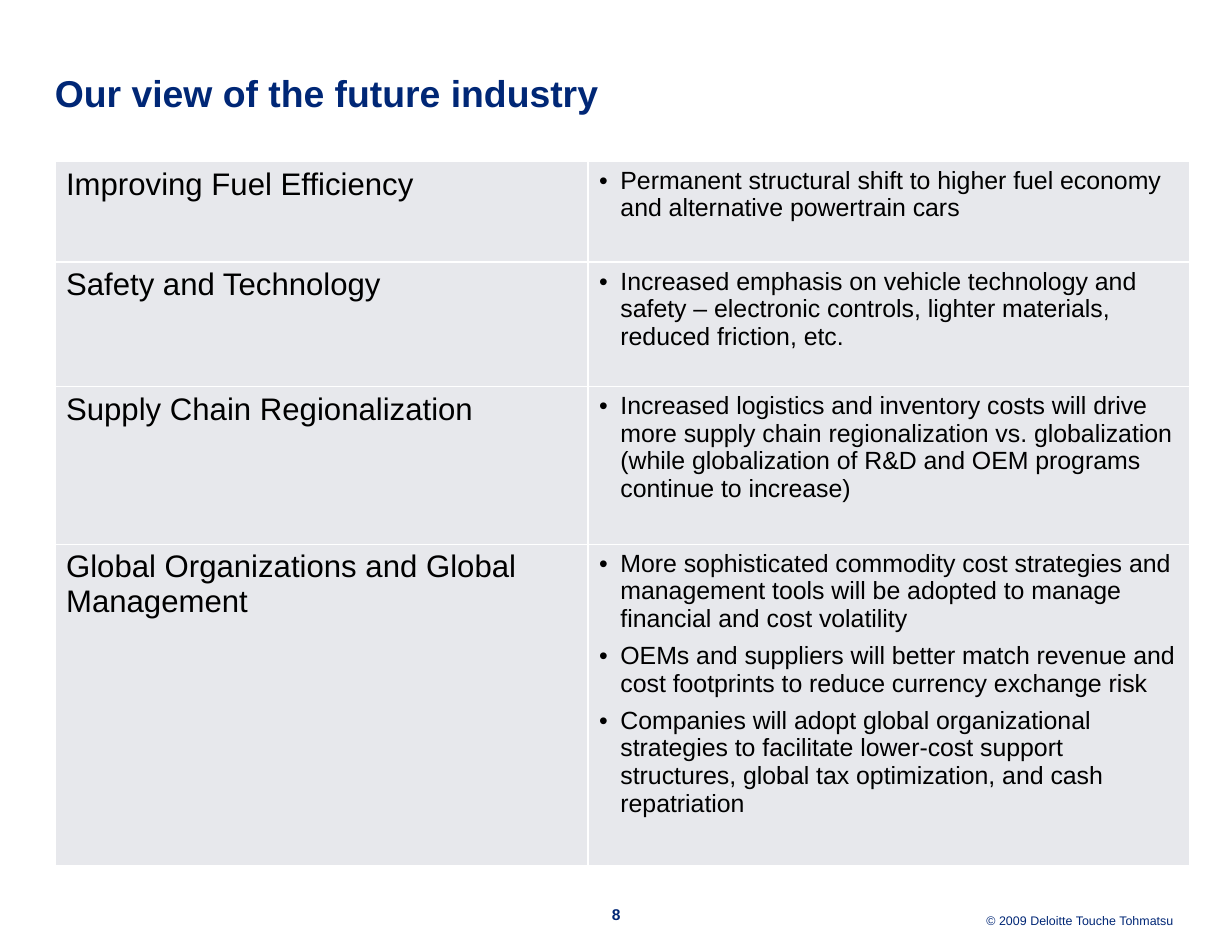
import lxml.etree
import pptx
import pptx.dml.color
import pptx.enum.text
import pptx.oxml.ns
import pptx.util

Pt = pptx.util.Pt
RGBColor = pptx.dml.color.RGBColor
ALIGN = pptx.enum.text.PP_ALIGN
ANCHOR = pptx.enum.text.MSO_ANCHOR
qn = pptx.oxml.ns.qn

NAVY = RGBColor(0x00, 0x27, 0x76)
BLACK = RGBColor(0x00, 0x00, 0x00)
WHITE = RGBColor(0xFF, 0xFF, 0xFF)
PALE_GRAY = RGBColor(0xE7, 0xE8, 0xEC)
FONT = "Arial"

COLUMN_WIDTHS = (342.7, 386.7)
TRENDS = [
    (64.8, "Improving Fuel Efficiency", [
        "Permanent structural shift to higher fuel economy and alternative powertrain cars"]),
    (79.9, "Safety and Technology", [
        "Increased emphasis on vehicle technology and safety – electronic controls, "
        "lighter materials, reduced friction, etc."]),
    (101.5, "Supply Chain Regionalization", [
        "Increased logistics and inventory costs will drive more supply chain "
        "regionalization vs. globalization (while globalization of R&D and OEM "
        "programs continue to increase)"]),
    (206.6, "Global Organizations and Global Management", [
        "More sophisticated commodity cost strategies and management tools will be "
        "adopted to manage financial and cost volatility",
        "OEMs and suppliers will better match revenue and cost footprints to reduce "
        "currency exchange risk",
        "Companies will adopt global organizational strategies to facilitate "
        "lower-cost support structures, global tax optimization, and cash "
        "repatriation"]),
]


def style_font(font, size, color, bold=False):
    font.name = FONT
    font.size = Pt(size)
    font.bold = bold
    font.color.rgb = color


def clear_margins(frame):
    frame.margin_left = frame.margin_right = 0
    frame.margin_top = frame.margin_bottom = 0
    frame.word_wrap = True
    frame.auto_size = pptx.enum.text.MSO_AUTO_SIZE.NONE


def add_title(page, box, text):
    title = page.shapes.title
    title.left, title.top, title.width, title.height = map(Pt, box)
    frame = title.text_frame
    clear_margins(frame)
    frame.vertical_anchor = ANCHOR.MIDDLE
    frame.text = text
    para = frame.paragraphs[0]
    para.alignment = ALIGN.LEFT
    para.line_spacing = 1.05
    style_font(para.runs[0].font, 24, NAVY, True)


def add_footer(page, box, text, size, alignment, bold=False):
    frame = page.shapes.add_textbox(*map(Pt, box)).text_frame
    clear_margins(frame)
    frame.text = text
    para = frame.paragraphs[0]
    para.alignment = alignment
    para.line_spacing = Pt(12)
    style_font(para.runs[0].font, size, NAVY, bold)


def add_bullet(para):
    properties = para._p.get_or_add_pPr()
    properties.set("marL", str(Pt(13.7)))
    properties.set("indent", str(-Pt(13.7)))
    lxml.etree.SubElement(properties, qn("a:buFont"), typeface=FONT)
    lxml.etree.SubElement(properties, qn("a:buChar"), char="•")


def add_borders(cell):
    properties = cell._tc.get_or_add_tcPr()
    for side in ("lnL", "lnR", "lnT", "lnB"):
        line = lxml.etree.SubElement(properties, qn("a:" + side), w=str(Pt(1)))
        fill = lxml.etree.SubElement(line, qn("a:solidFill"))
        lxml.etree.SubElement(fill, qn("a:srgbClr"), val=str(WHITE))


def fill_cell(cell, lines, size, bulleted):
    add_borders(cell)
    cell.fill.solid()
    cell.fill.fore_color.rgb = PALE_GRAY
    cell.text_frame.text = "\n".join(lines)
    for para in cell.text_frame.paragraphs:
        if bulleted:
            add_bullet(para)
        if len(lines) > 1:
            para.space_after = Pt(6)
        style_font(para.runs[0].font, size, BLACK)


def add_trend_table(page, box):
    frame = page.shapes.add_table(len(TRENDS), len(COLUMN_WIDTHS), *map(Pt, box))
    table = frame.table
    table.first_row = table.horz_banding = False
    for column, width in zip(table.columns, COLUMN_WIDTHS):
        column.width = Pt(width)
    for row, (height, heading, points) in zip(table.rows, TRENDS):
        row.height = Pt(height)
        fill_cell(row.cells[0], [heading], 20, False)
        fill_cell(row.cells[1], points, 16, True)


def main():
    deck = pptx.Presentation()
    deck.slide_width, deck.slide_height = Pt(792), Pt(612)
    page = deck.slides.add_slide(deck.slide_layouts[5])
    add_footer(page, (554.4, 584.6, 200.2, 13), "© 2009 Deloitte Touche Tohmatsu", 8, ALIGN.RIGHT)
    add_title(page, (35.3, 31, 729.4, 56.2), "Our view of the future industry")
    add_footer(page, (383.8, 581.8, 24.5, 13), "8", 10, ALIGN.CENTER, True)
    add_trend_table(page, (35.3, 103.7, 729.4, 452.8))
    deck.save("out.pptx")


if __name__ == "__main__":
    main()
